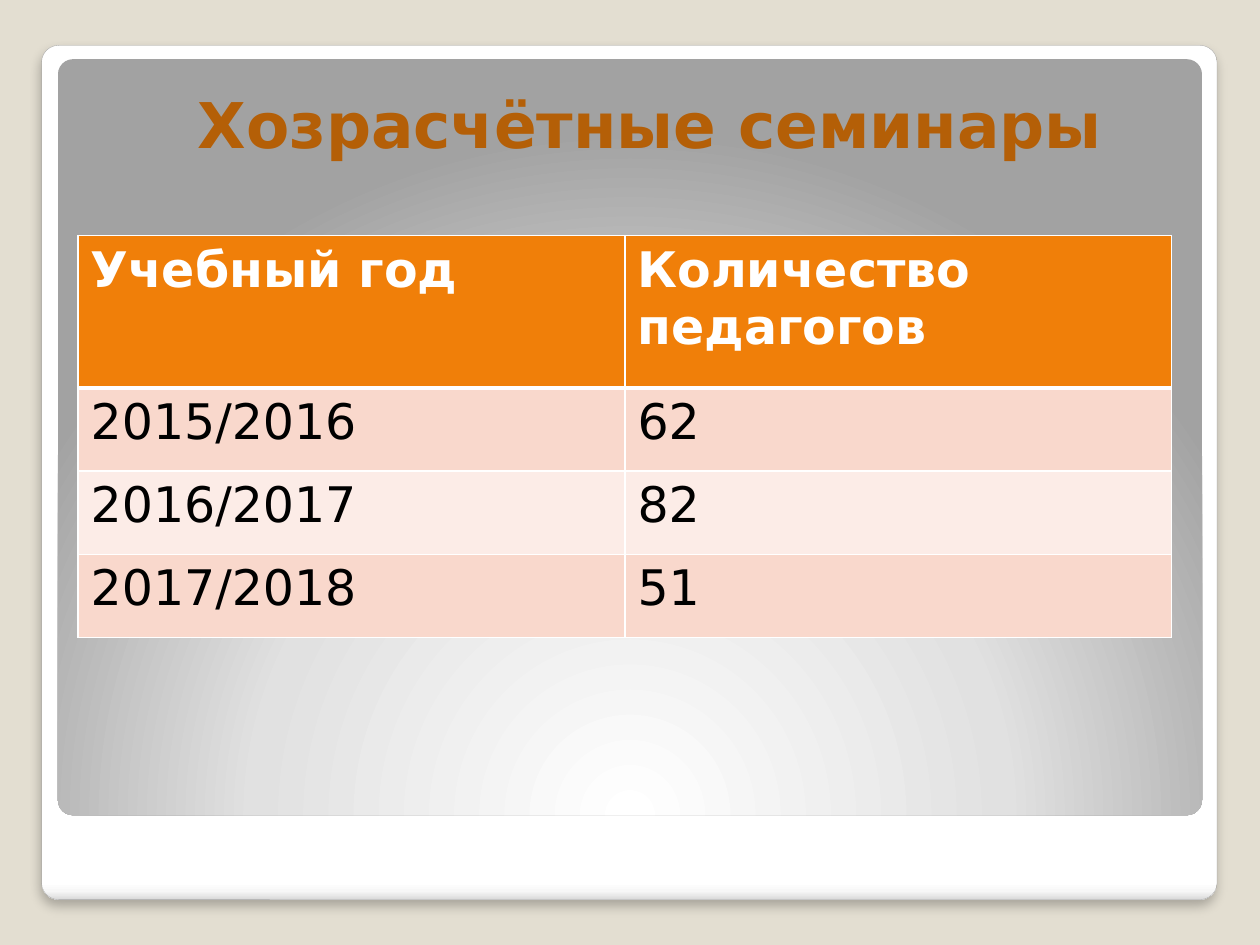
from lxml import etree
from pptx import Presentation
from pptx.dml.color import RGBColor
from pptx.enum.shapes import MSO_SHAPE
from pptx.enum.text import MSO_ANCHOR, PP_ALIGN
from pptx.oxml import parse_xml
from pptx.oxml.ns import nsdecls, qn
from pptx.util import Inches, Pt

ROUNDED = MSO_SHAPE.ROUNDED_RECTANGLE
CENTER = PP_ALIGN.CENTER
TOP = MSO_ANCHOR.TOP
FONT = "DejaVu Sans"
COLORS = {
    "background": "E3DED1",
    "frame_line": "A4A4A4",
    "title": "B45F07",
    "header": "F07F09",
    "odd_row": "F9D8CC",
    "even_row": "FCECE7",
    "white": "FFFFFF",
    "black": "000000",
}
FRAME_STOPS = [(0, "FFFFFF"), (98, "FFFFFF"), (99, "F7F7F7"), (100, "DADADA")]
PANEL_STOPS = [(0, "FFFFFF"), (55, "E1E1E1"), (100, "A2A2A2")]
DOWNWARD = '<a:lin ang="5400000" scaled="0"/>'
FROM_BELOW = ('<a:path path="circle"><a:fillToRect l="50000" t="175000" '
              'r="50000" b="-75000"/></a:path>')
ROWS = [
    ("Учебный год", "Количество педагогов"),
    ("2015/2016", "62"),
    ("2016/2017", "82"),
    ("2017/2018", "51"),
]


def color(name):
    return RGBColor.from_string(COLORS[name])


def add_run(paragraph, text, size, color_name, bold):
    run = paragraph.add_run()
    run.text = text
    run.font.name = FONT
    run.font.size = Pt(size)
    run.font.bold = bold
    run.font.color.rgb = color(color_name)


def add_panel(slide, left, top, width, height, stops, direction):
    """Add a rounded panel without line, filled with a gradient."""
    panel = slide.shapes.add_shape(
        ROUNDED, Inches(left), Inches(top), Inches(width), Inches(height))
    panel.adjustments[0] = 0.02
    panel.shadow.inherit = False
    panel.line.fill.background()
    panel.fill.background()
    stop_xml = "".join(
        f'<a:gs pos="{position * 1000}"><a:srgbClr val="{value}"/></a:gs>'
        for position, value in stops)
    properties = panel.element.spPr
    properties.replace(properties.find(qn("a:noFill")), parse_xml(
        f'<a:gradFill {nsdecls("a")} rotWithShape="1">'
        f'<a:gsLst>{stop_xml}</a:gsLst>{direction}</a:gradFill>'))
    return panel


def add_soft_shadow(shape):
    effects = shape.element.spPr.find(qn("a:effectLst"))
    effects.append(parse_xml(
        f'<a:outerShdw {nsdecls("a")} blurRad="{Pt(6)}" dist="{Pt(4)}" '
        f'dir="5400000" algn="t" rotWithShape="0">'
        f'<a:srgbClr val="{COLORS["black"]}"><a:alpha val="25000"/>'
        f'</a:srgbClr></a:outerShdw>'))


def place_title(slide, text):
    title = slide.shapes.title
    title.left, title.top = Inches(0.55), Inches(0.58)
    title.width, title.height = Inches(8.95), Inches(0.9)
    frame = title.text_frame
    frame.word_wrap = True
    frame.vertical_anchor = TOP
    frame.margin_left, frame.margin_right = Inches(0.37), Inches(0.1)
    frame.margin_top, frame.margin_bottom = Inches(0.1), Inches(0.05)
    paragraph = frame.paragraphs[0]
    paragraph.alignment = CENTER
    paragraph.line_spacing = 1.0
    paragraph.space_before = Pt(2.5)
    add_run(paragraph, text, 36, "title", True)
    # Bring the title in front of the panels
    title.element.getparent().append(title.element)


def set_borders(cell, top, bottom):
    """Draw white cell borders; top and bottom are widths in points."""
    properties = cell._tc.get_or_add_tcPr()
    widths = {"lnL": 1, "lnR": 1, "lnT": top, "lnB": bottom}
    for index, (side, width) in enumerate(widths.items()):
        border = etree.Element(qn(f"a:{side}"), w=str(Pt(width)))
        fill = etree.SubElement(border, qn("a:solidFill"))
        etree.SubElement(fill, qn("a:srgbClr"), val=COLORS["white"])
        properties.insert(index, border)


def add_seminar_table(slide):
    table = slide.shapes.add_table(
        len(ROWS), 2, Inches(0.62), Inches(1.87),
        Inches(8.68), Inches(3.19)).table
    for column in table.columns:
        column.width = Inches(4.34)
    for row_index, values in enumerate(ROWS):
        header = row_index == 0
        table.rows[row_index].height = Inches(1.21 if header else 0.66)
        fill_name = "header" if header else (
            "odd_row" if row_index % 2 else "even_row")
        for column_index, text in enumerate(values):
            cell = table.cell(row_index, column_index)
            cell.fill.solid()
            cell.fill.fore_color.rgb = color(fill_name)
            add_run(cell.text_frame.paragraphs[0], text, 28,
                    "white" if header else "black", header)
            set_borders(cell, top=3 if row_index == 1 else 1,
                        bottom=3 if header else 1)


def main():
    presentation = Presentation()
    presentation.slide_width = Inches(10)
    presentation.slide_height = Inches(7.5)
    slide = presentation.slides.add_slide(presentation.slide_layouts[5])
    slide.background.fill.solid()
    slide.background.fill.fore_color.rgb = color("background")

    frame = add_panel(slide, 0.33, 0.36, 9.33, 6.78, FRAME_STOPS, DOWNWARD)
    frame.line.color.rgb = color("frame_line")
    frame.line.width = Pt(0.16)
    add_soft_shadow(frame)
    add_panel(slide, 0.46, 0.47, 9.08, 6, PANEL_STOPS, FROM_BELOW)

    place_title(slide, "Хозрасчётные семинары")
    add_seminar_table(slide)
    presentation.save("out.pptx")


if __name__ == "__main__":
    main()
